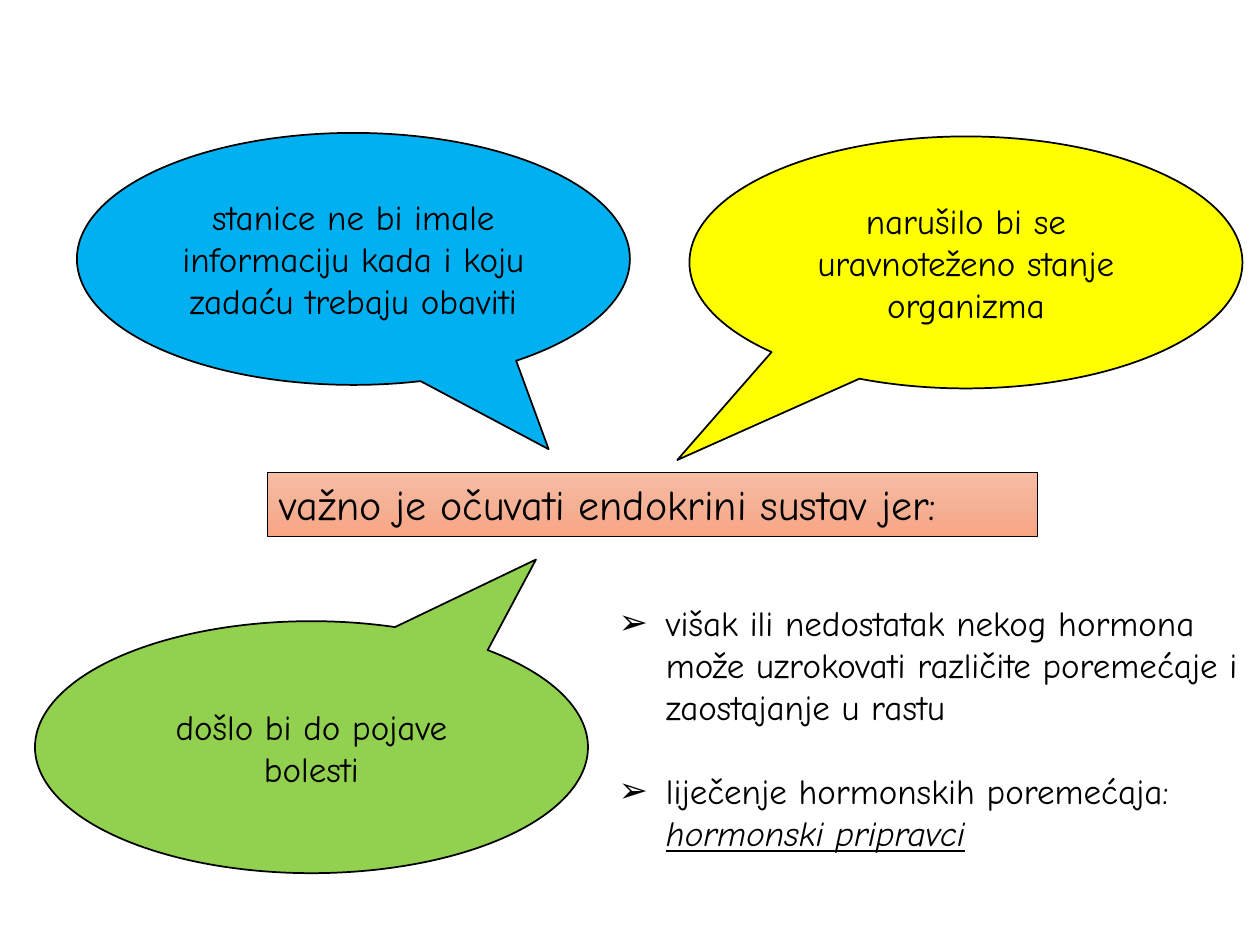
from copy import deepcopy
from dataclasses import dataclass

from pptx import Presentation
from pptx.dml.color import RGBColor
from pptx.enum import shapes, text
from pptx.oxml import ns, xmlchemy
from pptx.util import Pt

FONT = "Comic Neue"
COLORS = {
    "ink": "000000",
    "blue": "00B0F0",
    "yellow": "FFFF00",
    "green": "92D050",
}
BANNER_STOPS = ((0, "F7BDA5"), (0.5, "F5B196"), (1, "F8A582"))
CALLOUT_SIZE = (316, 144)
BULLET_INDENT = 27


@dataclass
class Callout:
    words: str
    color: str
    left: float
    top: float
    tail: tuple[float, float]


CALLOUTS = (
    Callout("stanice ne bi imale informaciju kada i koju zadaću trebaju obaviti",
            "blue", 44, 76, (0.353, 0.755)),
    Callout("narušilo bi se uravnoteženo stanje organizma",
            "yellow", 394, 78, (-0.522, 0.784)),
    Callout("došlo bi do pojave bolesti",
            "green", 20, 355, (0.406, -0.745)),
)


def rgb(name: str) -> RGBColor:
    return RGBColor.from_string(COLORS[name])


def write(paragraph, words: str, *, size=20, italic=None, underline=None,
          align=text.PP_ALIGN.LEFT) -> None:
    """Append one formatted run to a paragraph."""
    paragraph.alignment = align
    run = paragraph.add_run()
    run.text = words
    run.font.name = FONT
    run.font.size = Pt(size)
    run.font.italic = italic
    run.font.underline = underline
    run.font.color.rgb = rgb("ink")


def place(shape, left: float, top: float, width: float, height: float) -> None:
    shape.left, shape.top = Pt(left), Pt(top)
    shape.width, shape.height = Pt(width), Pt(height)


def prepare_frame(shape, anchor):
    frame = shape.text_frame
    frame.word_wrap = True
    frame.auto_size = text.MSO_AUTO_SIZE.NONE
    frame.vertical_anchor = anchor
    return frame


def outline(shape, width: float) -> None:
    shape.line.color.rgb = rgb("ink")
    shape.line.width = Pt(width)


def fill_banner(shape) -> None:
    """Fill from top to bottom with the three banner colours."""
    shape.fill.gradient()
    shape.fill.gradient_angle = 270
    first_stop = shape._element.spPr.find(".//" + ns.qn("a:gs"))
    first_stop.addnext(deepcopy(first_stop))
    for stop, (position, color) in zip(shape.fill.gradient_stops, BANNER_STOPS):
        stop.position = position
        stop.color.rgb = RGBColor.from_string(color)


def add_bullet(paragraph, mark: str = "➢") -> None:
    properties = paragraph._p.get_or_add_pPr()
    properties.set("marL", str(Pt(BULLET_INDENT)))
    properties.set("indent", str(-Pt(BULLET_INDENT)))
    bullet = xmlchemy.OxmlElement("a:buChar")
    bullet.set("char", mark)
    properties.append(bullet)


def add_callout(slide, callout: Callout) -> None:
    bubble = slide.shapes.add_shape(
        shapes.MSO_SHAPE.OVAL_CALLOUT, Pt(callout.left), Pt(callout.top),
        *map(Pt, CALLOUT_SIZE))
    bubble.adjustments[0], bubble.adjustments[1] = callout.tail
    bubble.shadow.inherit = False
    bubble.fill.solid()
    bubble.fill.fore_color.rgb = rgb(callout.color)
    outline(bubble, 1)
    frame = prepare_frame(bubble, text.MSO_ANCHOR.MIDDLE)
    write(frame.paragraphs[0], callout.words, align=text.PP_ALIGN.CENTER)


def main() -> None:
    deck = Presentation()
    deck.slide_width, deck.slide_height = Pt(720), Pt(540)
    slide = deck.slides.add_slide(deck.slide_layouts[1])

    # Central statement
    statement = slide.shapes.title
    place(statement, 152.6, 270, 440, 36.4)
    fill_banner(statement)
    outline(statement, 0.5)
    frame = prepare_frame(statement, text.MSO_ANCHOR.TOP)
    write(frame.paragraphs[0], "važno je očuvati endokrini sustav jer:", size=24)

    # Consequences around the statement
    for callout in CALLOUTS:
        add_callout(slide, callout)

    # Disorders and their treatment
    disorders = slide.placeholders[1]
    place(disorders, 346.3, 340, 373.7, 152.6)
    frame = prepare_frame(disorders, text.MSO_ANCHOR.TOP)
    excess, treatment = frame.paragraphs[0], frame.add_paragraph()
    for paragraph, gap in ((excess, 0), (treatment, 24)):
        add_bullet(paragraph)
        paragraph.space_before = Pt(gap)
    write(excess, "višak ili nedostatak nekog hormona može uzrokovati "
                  "različite poremećaje i zaostajanje u rastu")
    write(treatment, "liječenje hormonskih poremećaja: ")
    write(treatment, "hormonski pripravci", italic=True, underline=True)

    deck.save("out.pptx")


if __name__ == "__main__":
    main()
